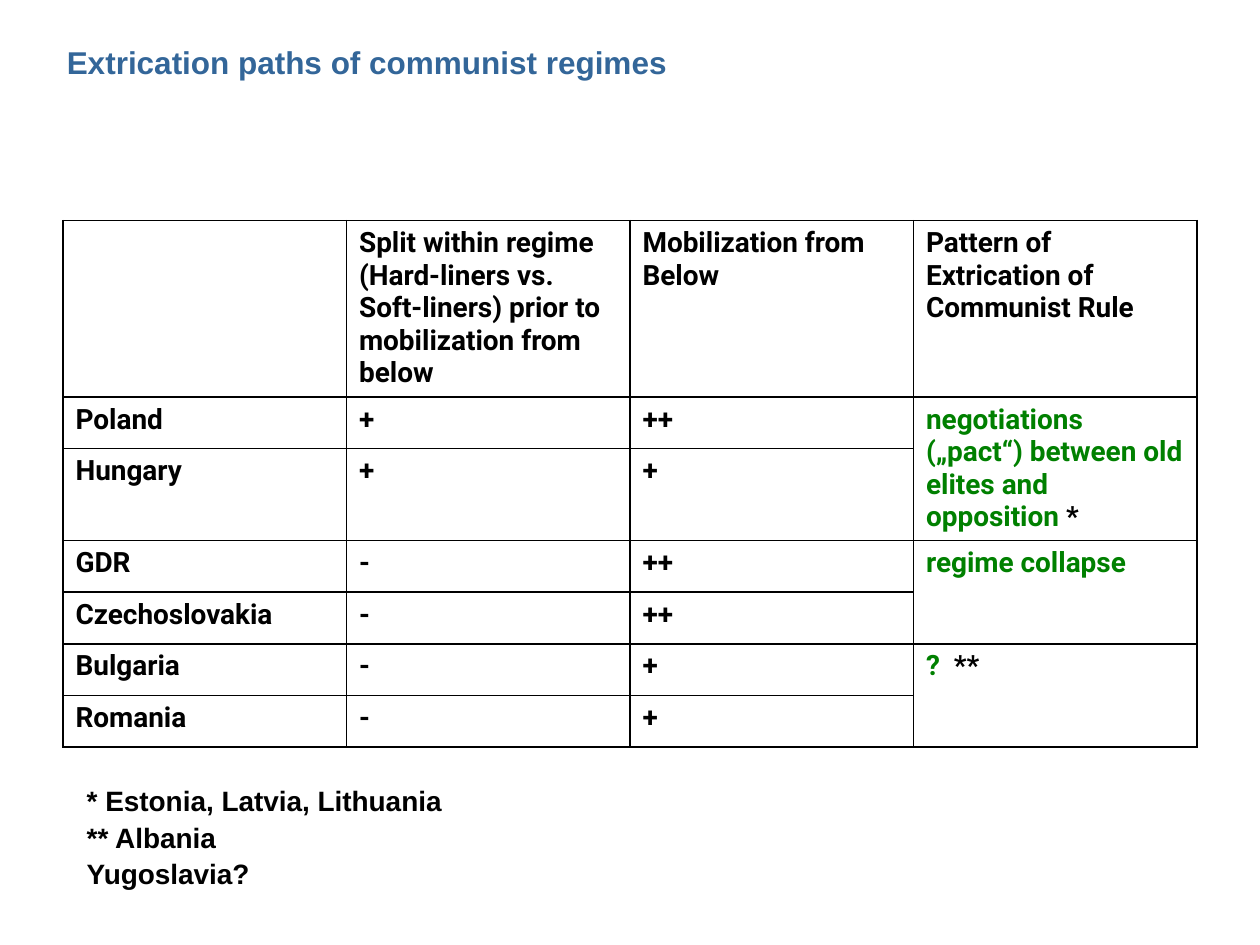
"""Build a slide with a table of the extrication paths of communist regimes."""
from lxml.etree import SubElement
from pptx import Presentation
from pptx.dml.color import RGBColor
from pptx.enum.text import MSO_ANCHOR, MSO_AUTO_SIZE, PP_ALIGN
from pptx.oxml.ns import qn
from pptx.util import Inches, Pt

BLACK, BLUE, GREEN = "000000", "336699", "008000"
TITLE = "Extrication paths of communist regimes"
HEADERS = [
    "",
    "Split within regime (Hard-liners vs. Soft-liners) prior to mobilization from below",
    "Mobilization from Below",
    "Pattern of Extrication of Communist Rule",
]
COUNTRIES = [
    ("Poland", "+", "++"),
    ("Hungary", "+", "+"),
    ("GDR", "-", "++"),
    ("Czechoslovakia", "-", "++"),
    ("Bulgaria", "-", "+"),
    ("Romania", "-", "+"),
]
PATTERNS = [
    ("negotiations („pact“) between old elites and opposition ", "*"),
    ("regime collapse", ""),
    ("?  ", "**"),
]
ROW_HEIGHTS = [1.4, 0.41, 0.73, 0.41, 0.41, 0.41, 0.41]
FOOTNOTES = ["* Estonia, Latvia, Lithuania", "** Albania", "Yugoslavia?"]


def color(value):
    return RGBColor.from_string(value)


class SlideBuilder:
    """Hold the style and the current slide, and add its elements."""

    text_font, table_font = "Arial", "Roboto"
    title_size, body_size = Pt(18), Pt(16)
    border_width = Pt(1)

    def __init__(self, presentation):
        self.slide = presentation.slides.add_slide(presentation.slide_layouts[5])

    def format_paragraph(self, paragraph, name, size, text_color=BLACK):
        paragraph.alignment = PP_ALIGN.LEFT
        font = paragraph.font
        font.name, font.size, font.bold = name, size, True
        font.color.rgb = color(text_color)

    def add_title(self, text, left, top, width, height):
        title = self.slide.shapes.title
        title.left, title.top = Inches(left), Inches(top)
        title.width, title.height = Inches(width), Inches(height)
        frame = title.text_frame
        frame.text = text
        frame.auto_size = MSO_AUTO_SIZE.NONE
        frame.vertical_anchor = MSO_ANCHOR.MIDDLE
        paragraph = frame.paragraphs[0]
        paragraph.line_spacing = 0.9
        self.format_paragraph(paragraph, self.text_font, self.title_size, BLUE)

    def add_notes(self, lines, left, top, width, height):
        shape = self.slide.shapes.add_textbox(
            Inches(left), Inches(top), Inches(width), Inches(height)
        )
        frame = shape.text_frame
        frame.word_wrap = False
        frame.auto_size = MSO_AUTO_SIZE.SHAPE_TO_FIT_TEXT
        frame.text = "\n".join(lines)
        for paragraph in frame.paragraphs:
            paragraph.line_spacing = 0.9
            paragraph.space_before = Pt(3.7)
            self.format_paragraph(paragraph, self.text_font, self.body_size)

    def add_table(self, rows, row_heights, left, top, width):
        frame = self.slide.shapes.add_table(
            len(rows), len(rows[0]), Inches(left), Inches(top),
            Inches(width), Inches(sum(row_heights)),
        )
        table = frame.table
        table.first_row = table.horz_banding = False
        for row, height, texts in zip(table.rows, row_heights, rows):
            row.height = Inches(height)
            for cell, text in zip(row.cells, texts):
                cell.text = text
                self.format_paragraph(
                    cell.text_frame.paragraphs[0], self.table_font, self.body_size
                )
                self.add_borders(cell)
                cell.fill.background()
        return table

    def add_borders(self, cell):
        properties = cell._tc.get_or_add_tcPr()
        for side in ("a:lnL", "a:lnR", "a:lnT", "a:lnB"):
            line = SubElement(properties, qn(side), w=str(self.border_width))
            fill = SubElement(line, qn("a:solidFill"))
            SubElement(fill, qn("a:srgbClr"), val=BLACK)

    def add_pattern(self, table, first_row, pattern, mark):
        column = len(table.columns) - 1
        cell = table.cell(first_row, column)
        cell.merge(table.cell(first_row + 1, column))
        paragraph = cell.text_frame.paragraphs[0]
        for text, text_color in ((pattern, GREEN), (mark, BLACK)):
            if text:
                run = paragraph.add_run()
                run.text = text
                run.font.color.rgb = color(text_color)


def main():
    presentation = Presentation()
    presentation.slide_width, presentation.slide_height = Inches(10), Inches(7.5)
    builder = SlideBuilder(presentation)
    builder.add_title(TITLE, 0.43, 0.21, 9, 0.6)
    rows = [HEADERS] + [[*country, ""] for country in COUNTRIES]
    table = builder.add_table(rows, ROW_HEIGHTS, 0.5, 1.75, 9)
    for index, (pattern, mark) in enumerate(PATTERNS):
        builder.add_pattern(table, 1 + 2 * index, pattern, mark)
    builder.add_notes(FOOTNOTES, 0.59, 6.2, 3.06, 0.94)
    presentation.save("out.pptx")


if __name__ == "__main__":
    main()
